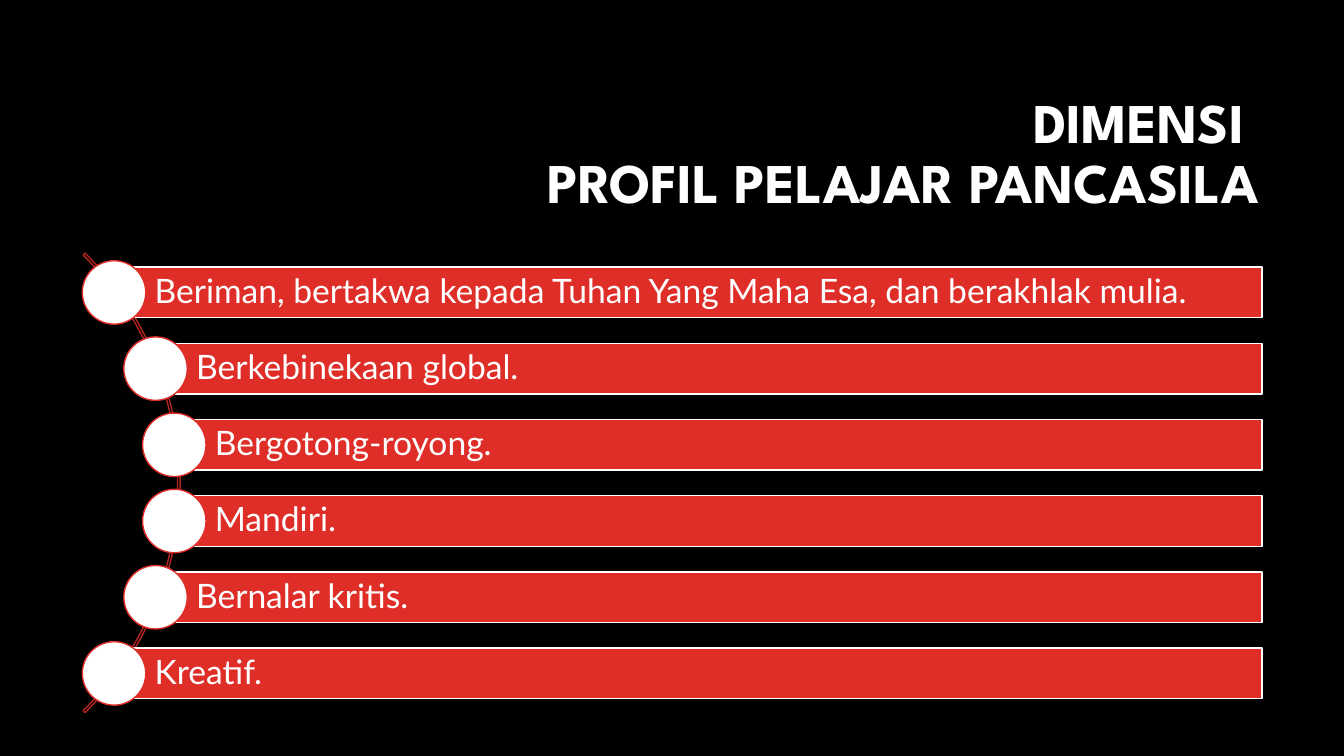
from dataclasses import dataclass
from math import sqrt

from pptx import Presentation
from pptx.dml.color import RGBColor
from pptx.enum.shapes import MSO_SHAPE as Preset
from pptx.enum.text import MSO_ANCHOR as Anchor, MSO_AUTO_SIZE as AutoSize, PP_ALIGN as Align
from pptx.util import Cm, Pt

# Content
TITLE_LINES = ["DIMENSI ", "PROFIL PELAJAR PANCASILA"]
DIMENSIONS = [
    "Beriman, bertakwa kepada Tuhan Yang Maha Esa, dan berakhlak mulia.",
    "Berkebinekaan global.",
    "Bergotong-royong.",
    "Mandiri.",
    "Bernalar kritis.",
    "Kreatif.",
]


@dataclass(frozen=True)
class Theme:
    background: RGBColor = RGBColor(0x00, 0x00, 0x00)
    light: RGBColor = RGBColor(0xFF, 0xFF, 0xFF)
    red: RGBColor = RGBColor(0xDF, 0x2E, 0x28)
    dark_red: RGBColor = RGBColor(0xB3, 0x25, 0x20)
    title_font: str = "League Spartan"
    body_font: str = "Lato"
    title_size: Pt = Pt(40)
    body_size: Pt = Pt(24)
    line_width: Pt = Pt(1)
    line_spacing: float = 0.9


THEME = Theme()

# Geometry in centimetres
ARC_CENTRE_X, ARC_CENTRE_Y, ARC_SIZE = -3.65, 12.17, 16.38
DOT_ORBIT, DOT_SIZE = 8.1, 1.6
ROW_STEP, BAR_HEIGHT, BAR_RIGHT = 1.92, 1.28, 31.8


def add_preset(slide, preset, left, top, width, height, fill, line):
    shape = slide.shapes.add_shape(preset, Cm(left), Cm(top), Cm(width), Cm(height))
    shape.shadow.inherit = False
    if fill is None:
        shape.fill.background()
    else:
        shape.fill.solid()
        shape.fill.fore_color.rgb = fill
    shape.line.color.rgb = line
    shape.line.width = THEME.line_width
    return shape


def add_run(paragraph, text, font_name, size, bold=False):
    run = paragraph.add_run()
    run.text = text
    run.font.name = font_name
    run.font.size = size
    run.font.bold = bold
    run.font.color.rgb = THEME.light


def add_title(slide):
    title = slide.shapes.title
    title.left, title.top, title.width, title.height = Cm(8.05), Cm(2.13), Cm(23.93), Cm(3.58)
    frame = title.text_frame
    frame.auto_size = AutoSize.NONE
    frame.word_wrap = True
    frame.vertical_anchor = Anchor.MIDDLE
    paragraph = frame.paragraphs[0]
    paragraph.alignment = Align.RIGHT
    paragraph.line_spacing = THEME.line_spacing
    for index, line in enumerate(TITLE_LINES):
        if index:
            paragraph.add_line_break()
        add_run(paragraph, line, THEME.title_font, THEME.title_size, bold=True)


def add_arc(slide):
    radius = ARC_SIZE / 2
    arc = add_preset(slide, Preset.BLOCK_ARC, ARC_CENTRE_X - radius, ARC_CENTRE_Y - radius,
                     ARC_SIZE, ARC_SIZE, None, THEME.dark_red)
    # Start and end angles (315 and 45 degrees), then the band thickness
    for index, value in enumerate((189, 27, 0.004)):
        arc.adjustments[index] = value


def add_dimension(slide, index, text):
    # Each dot sits on a circle around the arc's centre
    offset = (index - (len(DIMENSIONS) - 1) / 2) * ROW_STEP
    x = ARC_CENTRE_X + sqrt(DOT_ORBIT ** 2 - offset ** 2)
    y = ARC_CENTRE_Y + offset

    bar = add_preset(slide, Preset.RECTANGLE, x, y - BAR_HEIGHT / 2,
                     BAR_RIGHT - x, BAR_HEIGHT, THEME.red, THEME.light)
    frame = bar.text_frame
    frame.word_wrap = True
    frame.vertical_anchor = Anchor.MIDDLE
    frame.margin_left = Cm(1.02)
    frame.margin_top = frame.margin_right = frame.margin_bottom = Cm(0.17)
    paragraph = frame.paragraphs[0]
    paragraph.alignment = Align.LEFT
    paragraph.line_spacing = THEME.line_spacing
    add_run(paragraph, text, THEME.body_font, THEME.body_size)

    add_preset(slide, Preset.OVAL, x - DOT_SIZE / 2, y - DOT_SIZE / 2,
               DOT_SIZE, DOT_SIZE, THEME.light, THEME.red)


def main():
    presentation = Presentation()
    presentation.slide_width, presentation.slide_height = Cm(33.87), Cm(19.05)
    slide = presentation.slides.add_slide(presentation.slide_layouts.get_by_name("Title Only"))
    slide.background.fill.solid()
    slide.background.fill.fore_color.rgb = THEME.background

    add_title(slide)
    add_arc(slide)
    for index, text in enumerate(DIMENSIONS):
        add_dimension(slide, index, text)

    presentation.save("out.pptx")


if __name__ == "__main__":
    main()
